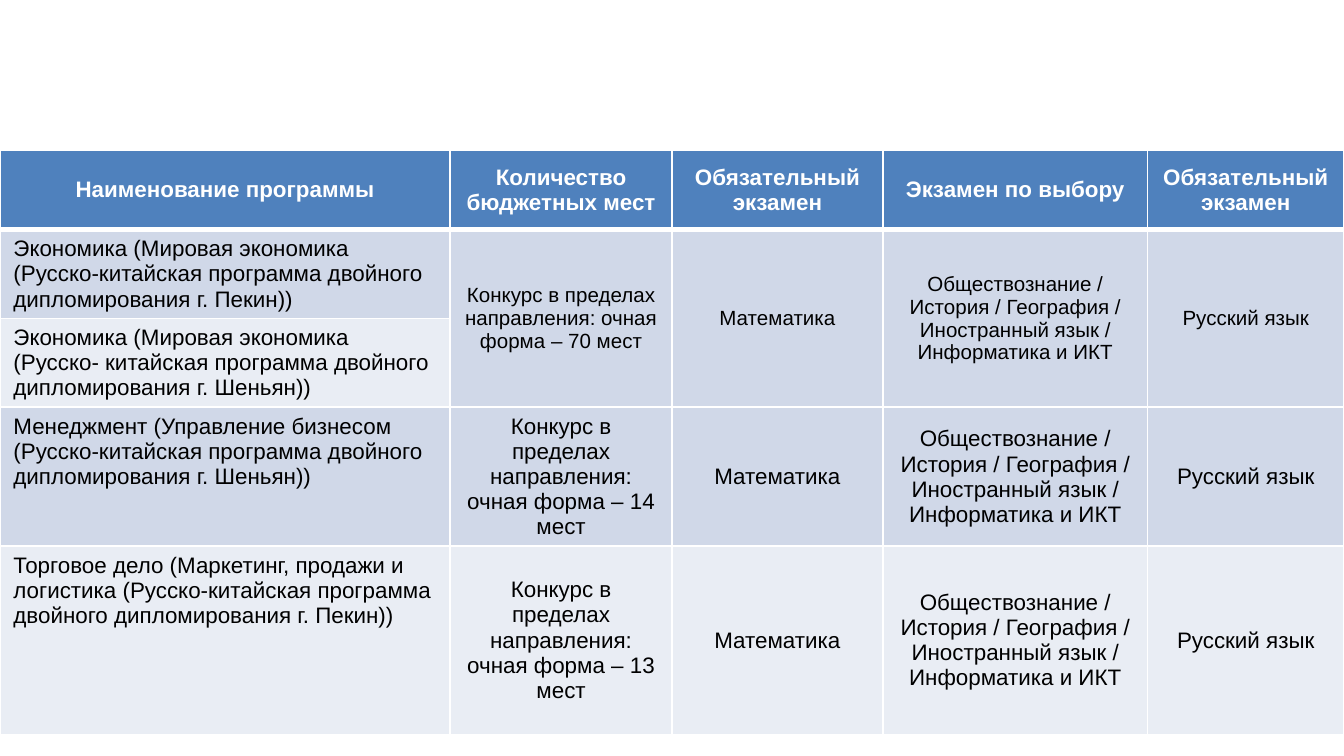
from lxml import etree
from pptx import Presentation
from pptx.dml.color import RGBColor
from pptx.enum import text
from pptx.oxml import ns
from pptx.util import Inches, Pt

COLORS = {"header": "4F81BD", "odd": "D0D8E8", "even": "E9EDF4",
          "white": "FFFFFF", "black": "000000"}
COL_WIDTHS = [3.35, 1.65, 1.57, 1.97, 1.46]
ROW_HEIGHTS = [0.59, 0.56, 0.26, 0.9, 1.4]
HEADERS = ["Наименование программы", "Количество бюджетных мест",
           "Обязательный экзамен", "Экзамен по выбору", "Обязательный экзамен"]
PROGRAMS = [
    ("Экономика (Мировая экономика (Русско-китайская программа двойного "
     "дипломирования г. Пекин))", 70),
    ("Экономика (Мировая экономика (Русско- китайская программа двойного "
     "дипломирования г. Шеньян))", None),
    ("Менеджмент (Управление бизнесом (Русско-китайская программа двойного "
     "дипломирования г. Шеньян))", 14),
    ("Торговое дело (Маркетинг, продажи и логистика (Русско-китайская программа "
     "двойного дипломирования г. Пекин))", 13),
]
EXAMS = ["Математика",
         "Обществознание / История / География / Иностранный язык / Информатика и ИКТ",
         "Русский язык"]


def set_borders(cell, bottom=1):
    """Draw white borders around a cell, with the given bottom width in points."""
    tcPr = cell._tc.get_or_add_tcPr()
    widths = {"lnL": 1, "lnR": 1, "lnT": 1, "lnB": bottom}
    for i, (tag, width) in enumerate(widths.items()):
        ln = etree.Element(ns.qn(f"a:{tag}"), w=str(Pt(width)))
        fill = etree.SubElement(ln, ns.qn("a:solidFill"))
        etree.SubElement(fill, ns.qn("a:srgbClr"), val=COLORS["white"])
        tcPr.insert(i, ln)


def style_cell(cell, fill, color="black", size=12, bold=False, centered=True):
    """Apply fill, alignment and font to a cell."""
    cell.fill.solid()
    cell.fill.fore_color.rgb = RGBColor.from_string(COLORS[fill])
    p = cell.text_frame.paragraphs[0]
    if centered:
        cell.vertical_anchor = text.MSO_ANCHOR.MIDDLE
        p.alignment = text.PP_ALIGN.CENTER
    for r in p.runs:
        r.font.name = "Arial"
        r.font.size = Pt(size)
        r.font.bold = bold
        r.font.color.rgb = RGBColor.from_string(COLORS[color])


def add_programs_table(s, left, top, width, height):
    """Place the table of programmes, places and exams in the given box."""
    frame = s.shapes.add_table(len(ROW_HEIGHTS), len(COL_WIDTHS), Inches(left),
                               Inches(top), Inches(width), Inches(height))
    table = frame.table
    for column, col_width in zip(table.columns, COL_WIDTHS):
        column.width = Inches(col_width)
    for row, row_height in zip(table.rows, ROW_HEIGHTS):
        row.height = Inches(row_height)
    frame.height = Inches(height)

    for col, title in enumerate(HEADERS):
        cell = table.cell(0, col)
        cell.text_frame.text = title
        style_cell(cell, "header", "white", bold=True)
        set_borders(cell, bottom=3)

    for row, (program, places) in enumerate(PROGRAMS, start=1):
        values = [program]
        if places is not None:
            values += [f"Конкурс в пределах направления: очная форма – {places} мест", *EXAMS]
        fill = "odd" if row % 2 else "even"
        for col in range(len(COL_WIDTHS)):
            cell = table.cell(row, col)
            if col < len(values):
                cell.text_frame.text = values[col]
            size = 11 if row == 1 and col else 12
            style_cell(cell, fill, size=size, centered=col > 0)
            set_borders(cell)

    for col in range(1, len(COL_WIDTHS)):
        table.cell(1, col).merge(table.cell(2, col))


def main():
    """Build the slide and save the presentation."""
    prs = Presentation()
    prs.slide_width = Inches(10)
    prs.slide_height = prs.slide_width * 9 // 16
    s = prs.slides.add_slide(prs.slide_layouts[6])
    add_programs_table(s, 0, 1.12, 10, 4.48)
    prs.save("out.pptx")


if __name__ == "__main__":
    main()
